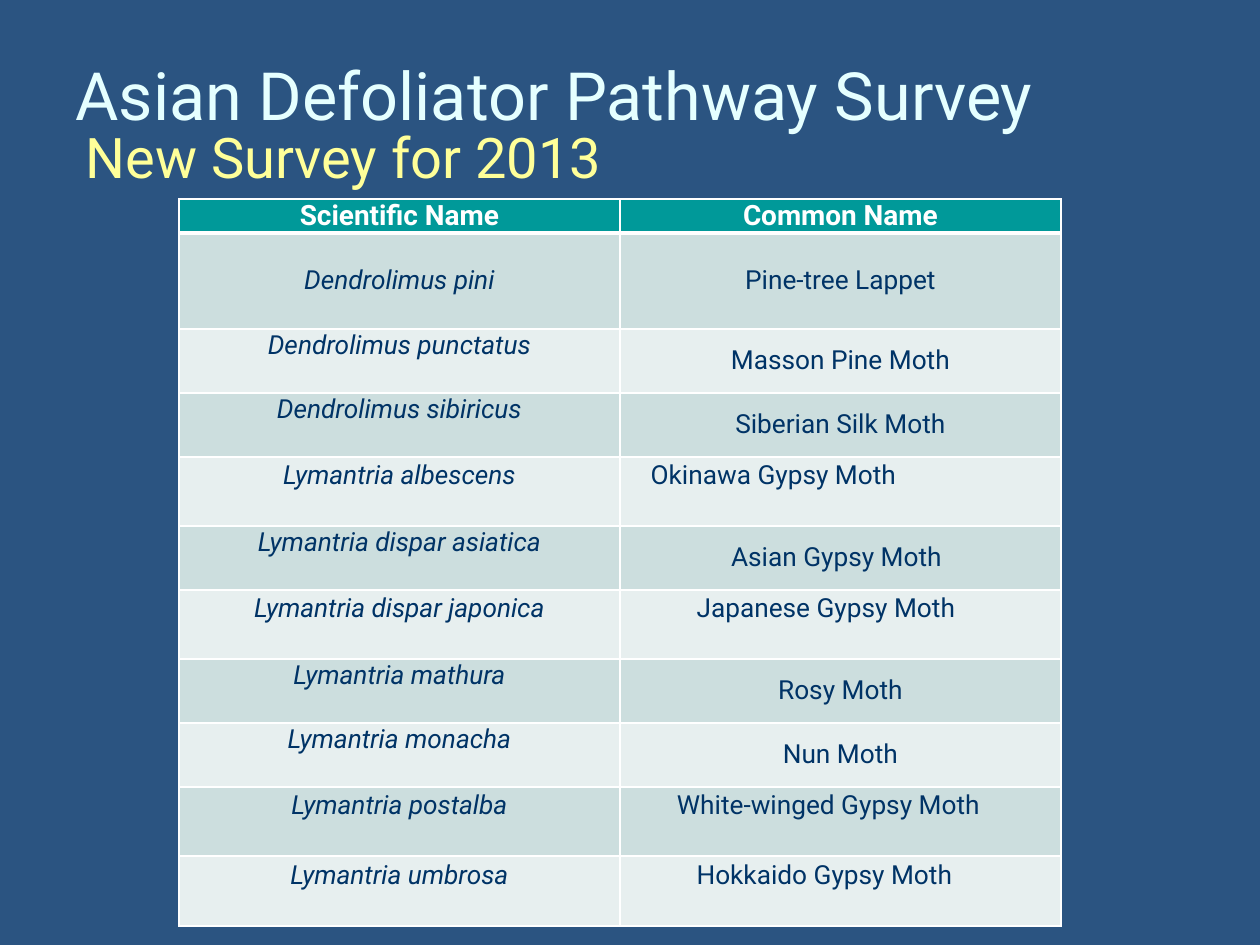
import pptx
import pptx.util
import pptx.dml.color
import pptx.enum.text
import pptx.oxml
import pptx.oxml.ns

PX = 914400 // 126
MIDDLE = pptx.enum.text.MSO_ANCHOR.MIDDLE
TOP = pptx.enum.text.MSO_ANCHOR.TOP


def add_run(p, text, size, color, bold=False, italic=False):
    r = p.add_run()
    r.text = text
    r.font.name = "Roboto"
    r.font.size = pptx.util.Pt(size)
    r.font.bold = bold
    r.font.italic = italic
    r.font.color.rgb = pptx.dml.color.RGBColor.from_string(color)


def add_borders(cell, widths):
    """Draw white cell edges; widths are points for left, right, top, bottom."""
    tcPr = cell._tc.get_or_add_tcPr()
    for i, (side, width) in enumerate(zip("LRTB", widths)):
        tcPr.insert(i, pptx.oxml.parse_xml(
            f'<a:ln{side} {pptx.oxml.ns.nsdecls("a")} w="{width * 12700}">'
            f'<a:solidFill><a:srgbClr val="FFFFFF"/></a:solidFill></a:ln{side}>'))


prs = pptx.Presentation()
prs.slide_width = 1260 * PX
prs.slide_height = 945 * PX
s = prs.slides.add_slide(prs.slide_layouts[6])
s.background.fill.solid()
s.background.fill.fore_color.rgb = pptx.dml.color.RGBColor.from_string("2B5481")

# Title and subtitle
headings = [
    ("Asian Defoliator Pathway Survey", 63, 38, 1134, 112, 38, "E5FFFF", MIDDLE),
    ("New Survey for 2013", 73, 116, 551, 81, 32, "FFFF99", TOP),
]
for text, x, y, w, h, size, color, anchor in headings:
    sp = s.shapes.add_textbox(x * PX, y * PX, w * PX, h * PX)
    tf = sp.text_frame
    tf.word_wrap = True
    tf.vertical_anchor = anchor
    add_run(tf.paragraphs[0], text, size, color)

# Species: names, row height, bottom inset of each cell, right inset of the common name
LINE = 31
species = [
    ("Dendrolimus pini", "Pine-tree Lappet", 96, 0, 0, 0),
    ("Dendrolimus punctatus", "Masson Pine Moth", 64, LINE, 0, 0),
    ("Dendrolimus sibiricus", "Siberian Silk Moth", 64, LINE, 0, 0),
    ("Lymantria albescens", "Okinawa Gypsy Moth", 69, LINE, LINE, 134),
    ("Lymantria dispar asiatica", "Asian Gypsy Moth", 64, LINE, 0, 8),
    ("Lymantria dispar japonica", "Japanese Gypsy Moth", 69, LINE, LINE, 29),
    ("Lymantria mathura", "Rosy Moth", 64, LINE, 0, 0),
    ("Lymantria monacha", "Nun Moth", 64, LINE, 0, 0),
    ("Lymantria postalba", "White-winged Gypsy Moth", 69, LINE, LINE, 24),
    ("Lymantria umbrosa", "Hokkaido Gypsy Moth", 70, LINE, LINE, 32),
]
rows = [("Scientific Name", "Common Name", 34, 0, 0, 0)] + species
height = sum(row[2] for row in rows)
table = s.shapes.add_table(len(rows), 2, 179 * PX, 199 * PX, 882 * PX, height * PX).table
for col in table.columns:
    col.width = 441 * PX

for i, (scientific, common, row_height, bottom_1, bottom_2, right) in enumerate(rows):
    table.rows[i].height = row_height * PX
    header = i == 0
    fill = "009999" if header else ("E7EFEF", "CCDEDE")[i % 2]
    cells = [(scientific, bottom_1, 0), (common, bottom_2, right)]
    for j, (text, bottom, inset) in enumerate(cells):
        cell = table.cell(i, j)
        cell.margin_left = cell.margin_top = 0
        cell.margin_right = inset * PX
        cell.margin_bottom = bottom * PX
        cell.vertical_anchor = MIDDLE
        cell.fill.solid()
        cell.fill.fore_color.rgb = pptx.dml.color.RGBColor.from_string(fill)
        add_borders(cell, (1, 1, 3 if i == 1 else 1, 3 if header else 1))
        p = cell.text_frame.paragraphs[0]
        p.alignment = pptx.enum.text.PP_ALIGN.CENTER
        if header:
            add_run(p, text, 16, "FFFFFF", bold=True)
        else:
            add_run(p, text, 15, "003366", italic=j == 0)

prs.save("out.pptx")
